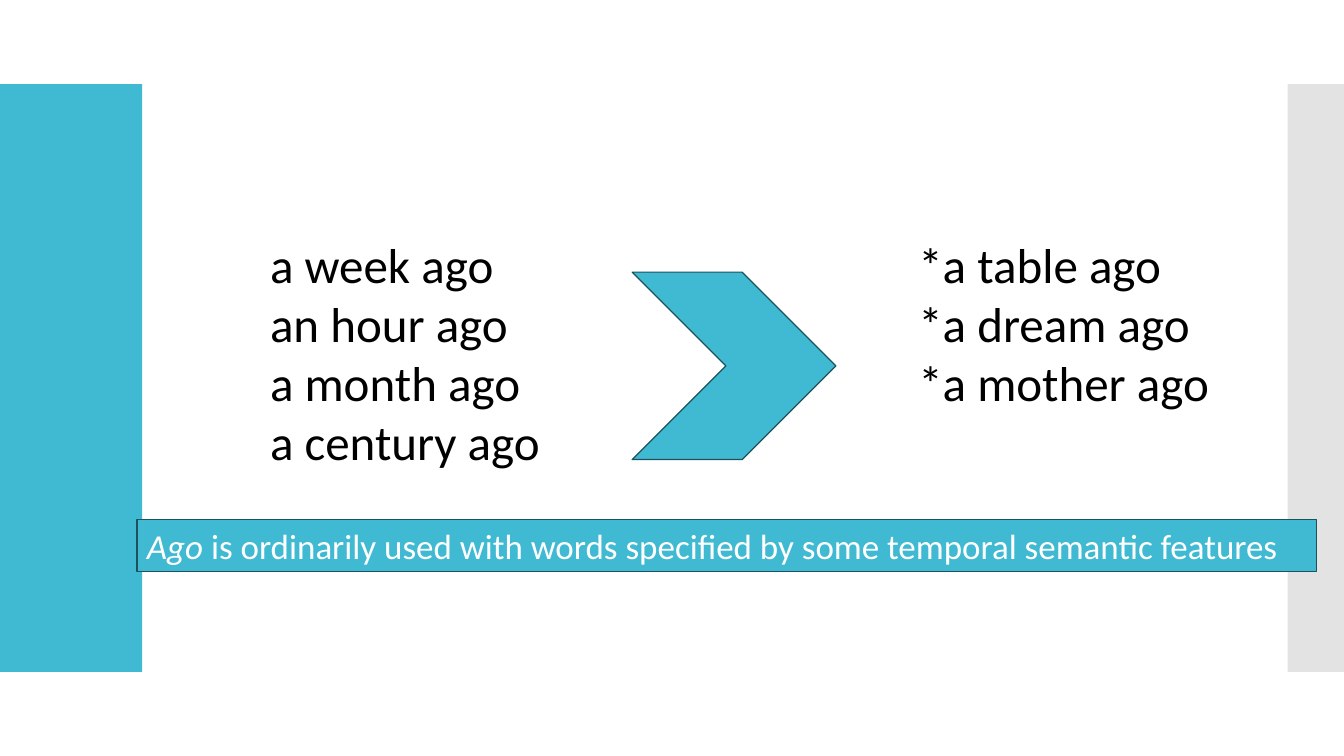
from lxml.etree import SubElement
from pptx import Presentation
from pptx.dml.color import RGBColor
from pptx.enum.shapes import MSO_SHAPE
from pptx.enum.text import MSO_ANCHOR, PP_ALIGN
from pptx.oxml.ns import qn
from pptx.util import Inches, Pt

WIDTH, HEIGHT = 13.33, 7.5
TEAL, EDGE, GREY, BLACK, WHITE = "40BAD2", "1C525C", "C8C8C8", "000000", "FFFFFF"
FONT = "Calibri"

ACCEPTED = ["a week ago", "an hour ago", "a month ago", "a century ago"]
REJECTED = ["*a table ago", "*a dream ago", "*a mother ago"]
RULE = [("Ago", True),
        (" is ordinarily used with words specified by some temporal semantic features", False)]

BAND_TOP, BAND_HEIGHT = HEIGHT / 9, HEIGHT * 7 / 9
TEAL_WIDTH, GREY_WIDTH = 1.41, 0.56
LIST_TOP, LIST_PITCH, LIST_PADDING = 2.28, 0.59, 0.1


def color(value):
    return RGBColor.from_string(value)


def add_block(page, kind, left, top, width, height, fill, edge=None, opacity=None):
    block = page.shapes.add_shape(
        kind, Inches(left), Inches(top), Inches(width), Inches(height))
    block.shadow.inherit = False
    block.fill.solid()
    block.fill.fore_color.rgb = color(fill)
    if opacity is not None:
        tint = block.fill._xPr.find(".//" + qn("a:srgbClr"))
        SubElement(tint, qn("a:alpha"), val=str(opacity * 1000))
    if edge:
        block.line.color.rgb = color(edge)
        block.line.width = Pt(0.85)
    else:
        block.line.fill.background()
    return block


def write(box, paragraphs, size, ink, wrap=False):
    frame = box.text_frame
    frame.word_wrap = wrap
    frame.vertical_anchor = MSO_ANCHOR.TOP
    for index, spans in enumerate(paragraphs):
        para = frame.paragraphs[0] if index == 0 else frame.add_paragraph()
        para.alignment = PP_ALIGN.LEFT
        for text, italic in spans:
            span = para.add_run()
            span.text = text
            span.font.name = FONT
            span.font.size = Pt(size)
            span.font.italic = italic
            span.font.color.rgb = color(ink)


def add_list(page, phrases, left, width):
    height = len(phrases) * LIST_PITCH + LIST_PADDING
    box = page.shapes.add_textbox(
        Inches(left), Inches(LIST_TOP), Inches(width), Inches(height))
    write(box, [[(phrase, False)] for phrase in phrases], size=35, ink=BLACK)


def main():
    deck = Presentation()
    deck.slide_width, deck.slide_height = Inches(WIDTH), Inches(HEIGHT)
    page = deck.slides.add_slide(deck.slide_layouts[6])

    add_block(page, MSO_SHAPE.RECTANGLE, 0, BAND_TOP, TEAL_WIDTH, BAND_HEIGHT, TEAL)
    add_block(page, MSO_SHAPE.RECTANGLE, WIDTH - GREY_WIDTH, BAND_TOP,
              GREY_WIDTH, BAND_HEIGHT, GREY, opacity=50)

    add_list(page, ACCEPTED, left=2.58, width=2.94)
    add_list(page, REJECTED, left=9.01, width=3.17)

    banner = add_block(page, MSO_SHAPE.RECTANGLE, 1.36, 5.15, 11.7, 0.52, TEAL, edge=EDGE)
    write(banner, [RULE], size=25, ink=WHITE)
    add_block(page, MSO_SHAPE.CHEVRON, 6.27, 2.7, 2.02, 1.86, TEAL, edge=EDGE)

    deck.save("out.pptx")


if __name__ == "__main__":
    main()
